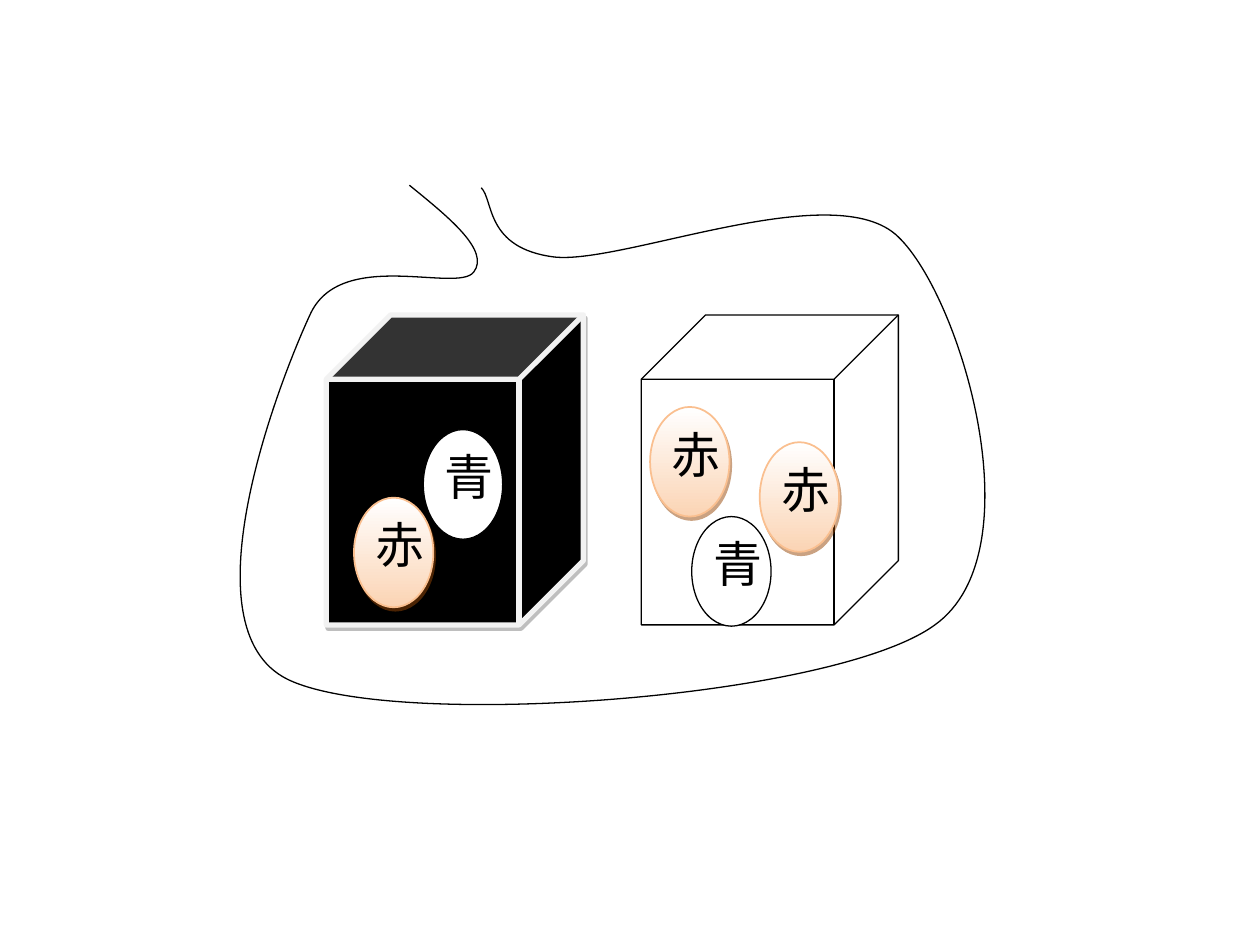
from dataclasses import dataclass

from pptx import Presentation
from pptx.dml.color import RGBColor
from pptx.enum.shapes import MSO_SHAPE
from pptx.enum.text import MSO_ANCHOR, PP_ALIGN
from pptx.oxml import parse_xml
from pptx.oxml.ns import nsdecls, qn
from pptx.oxml.xmlchemy import OxmlElement
from pptx.util import Inches, Pt

CUBE, OVAL = MSO_SHAPE.CUBE, MSO_SHAPE.OVAL
TOP, JUSTIFY = MSO_ANCHOR.TOP, PP_ALIGN.JUSTIFY


@dataclass(frozen=True)
class Theme:
    black: str = "000000"
    white: str = "FFFFFF"
    frame: str = "F2F2F2"
    frame_shadow: str = "7F7F7F"
    peach: str = "FBD4B4"
    orange: str = "FABF8F"
    brown: str = "974706"
    font: str = "Cambria"
    ball_size: int = 28
    thin: float = 0.75
    medium: float = 1
    thick: float = 3


BOX_SIZE = (2.04, 2.46)
BALL_SIZE = (0.63, 0.87)
RED_BALLS = [(2.81, 3.95), (5.16, 3.23), (6.03, 3.51)]
BLUE_BALLS = [(3.36, 3.41), (5.49, 4.1)]

BAG_START = (3.25, 1.47)
# Each row is one Bezier curve: two control points and the end point.
BAG_CURVES = [
    [(3.57, 1.73), (3.89, 1.99), (3.76, 2.16)],
    [(3.63, 2.33), (2.7, 1.96), (2.46, 2.5)],
    [(2.21, 3.04), (1.46, 4.98), (2.28, 5.39)],
    [(3.11, 5.8), (6.61, 5.55), (7.42, 4.96)],
    [(8.23, 4.38), (7.63, 2.36), (7.13, 1.88)],
    [(6.63, 1.39), (4.95, 2.1), (4.4, 2.04)],
    [(3.85, 1.97), (3.92, 1.59), (3.82, 1.49)],
]


class Drawing:
    def __init__(self, slide, theme):
        self.shapes = slide.shapes.add_group_shape().shapes
        self.theme = theme

    def paint(self, sp, fill, line, width, shadow=None):
        """Fill is None, one colour, or a (top, bottom) pair for a gradient."""
        if fill is None:
            sp.fill.background()
        elif isinstance(fill, tuple):
            sp.fill.gradient()
            sp.fill.gradient_angle = 270
            for stop, color in zip(sp.fill.gradient_stops, fill):
                stop.color.rgb = RGBColor.from_string(color)
        else:
            sp.fill.solid()
            sp.fill.fore_color.rgb = RGBColor.from_string(fill)
        sp.line.color.rgb = RGBColor.from_string(line)
        sp.line.width = Pt(width)
        sp.shadow.inherit = False
        if shadow:
            sp._element.spPr.find(qn("a:effectLst")).append(parse_xml(
                f'<a:outerShdw {nsdecls("a")} dist="{Pt(2.2)}" dir="3780000" '
                f'algn="ctr" rotWithShape="0"><a:srgbClr val="{shadow}">'
                '<a:alpha val="50000"/></a:srgbClr></a:outerShdw>'))

    def add(self, kind, at, size):
        return self.shapes.add_shape(kind, *map(Inches, at + size))

    def box(self, at, **look):
        sp = self.add(CUBE, at, BOX_SIZE)
        sp.adjustments[0] = 0.25
        self.paint(sp, **look)

    def ball(self, at, text, **look):
        sp = self.add(OVAL, at, BALL_SIZE)
        self.paint(sp, **look)
        tf = sp.text_frame
        layout = {
            "margin_left": Inches(0.08), "margin_right": Inches(0.08),
            "margin_top": Inches(0.01), "margin_bottom": Inches(0.01),
            "word_wrap": True, "vertical_anchor": TOP,
        }
        for name, value in layout.items():
            setattr(tf, name, value)
        p = tf.paragraphs[0]
        p.alignment = JUSTIFY
        r = p.add_run()
        r.text = text
        r.font.name = self.theme.font
        r.font.size = Pt(self.theme.ball_size)
        r.font.color.rgb = RGBColor.from_string(self.theme.black)

    def curve(self, start, curves, **look):
        """Draw an open outline of cubic Bezier curves."""
        builder = self.shapes.build_freeform(*map(Inches, start))
        points = [tuple(map(Inches, pt)) for row in curves for pt in row]
        builder.add_line_segments(points, close=False)
        sp = builder.convert_to_shape()
        segments = list(sp._element.iter(qn("a:lnTo")))
        for i in range(0, len(segments), 3):
            bezier = OxmlElement("a:cubicBezTo")
            segments[i].addprevious(bezier)
            for segment in segments[i:i + 3]:
                bezier.append(segment[0])
                segment.getparent().remove(segment)
        self.paint(sp, **look)


def main():
    prs = Presentation()
    prs.slide_width, prs.slide_height = Inches(10), Inches(7.5)
    t = Theme()
    d = Drawing(prs.slides.add_slide(prs.slide_layouts[6]), t)
    outline = {"fill": None, "line": t.black, "width": t.thin}
    red = {"fill": (t.white, t.peach), "line": t.orange,
           "width": t.medium, "shadow": t.brown}

    d.box((2.59, 2.5), fill=t.black, line=t.frame, width=t.thick,
          shadow=t.frame_shadow)
    d.box((5.09, 2.5), **outline)
    for at in RED_BALLS:
        d.ball(at, "赤", **red)
    for at in BLUE_BALLS:
        d.ball(at, "青", **{**outline, "fill": t.white})
    d.curve(BAG_START, BAG_CURVES, **outline)
    prs.save("out.pptx")


if __name__ == "__main__":
    main()
